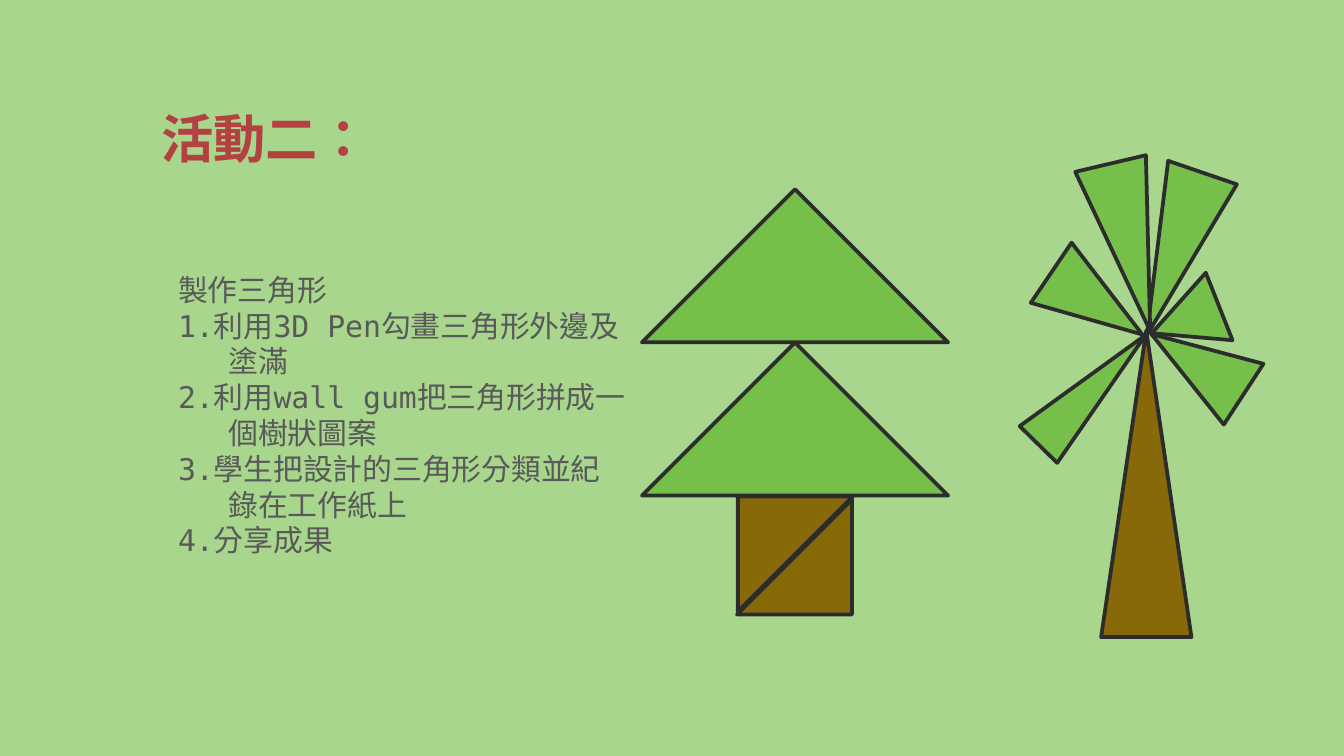
from pptx import Presentation
from pptx.dml.color import RGBColor
from pptx.enum.lang import MSO_LANGUAGE_ID
from pptx.enum.shapes import MSO_SHAPE
from pptx.enum.text import MSO_ANCHOR, MSO_AUTO_SIZE, PP_ALIGN
from pptx.util import Pt

GREEN, BROWN, OUTLINE = "77BF4B", "886909", "2C2C2C"


def color(hex_string):
    return RGBColor.from_string(hex_string)


def add_triangle(group, kind, left, top, width, height, rotation, fill):
    shape = group.shapes.add_shape(kind, Pt(left), Pt(top), Pt(width), Pt(height))
    shape.rotation = rotation
    shape.shadow.inherit = False
    shape.fill.solid()
    shape.fill.fore_color.rgb = color(fill)
    shape.line.color.rgb = color(OUTLINE)
    shape.line.width = Pt(2)


presentation = Presentation()
presentation.slide_width, presentation.slide_height = Pt(720), Pt(405)
slide = presentation.slides.add_slide(presentation.slide_layouts[0])
slide.background.fill.solid()
slide.background.fill.fore_color.rgb = color("A8D68C")

# Title and activity steps
title, steps = slide.shapes.title, slide.placeholders[1]
title.text = "活動二："
steps.text = "\n".join([
    "製作三角形",
    "1.利用3D Pen勾畫三角形外邊及塗滿",
    "2.利用wall gum把三角形拼成一個樹狀圖案",
    "3.學生把設計的三角形分類並紀錄在工作紙上",
    "4.分享成果",
])
for shape, box, font_name, size, text_color, bold, spacing in [
    (title, (79.2, 56.2, 210.2, 92.2), "Roboto", 28, "B44141", True, 0.8),
    (steps, (79.2, 138.2, 264.2, 195.1), "DejaVu Sans Mono", 16, "595959", False, 1.0),
]:
    shape.left, shape.top, shape.width, shape.height = map(Pt, box)
    frame = shape.text_frame
    frame.word_wrap = True
    frame.auto_size = MSO_AUTO_SIZE.NONE
    frame.vertical_anchor = MSO_ANCHOR.TOP
    frame.margin_left = frame.margin_right = Pt(7.2)
    frame.margin_top = frame.margin_bottom = Pt(7.2)
    for paragraph in frame.paragraphs:
        paragraph.alignment = PP_ALIGN.LEFT
        paragraph.line_spacing = spacing
        paragraph.space_before = Pt(0)
        paragraph.font.name = font_name
        paragraph.font.size = Pt(size)
        paragraph.font.bold = bold
        paragraph.font.color.rgb = color(text_color)
        # Traditional Chinese centres the full-width colon
        for run in paragraph.runs:
            run.font.language_id = MSO_LANGUAGE_ID.TRADITIONAL_CHINESE

# Hanging indent for the steps
for paragraph in steps.text_frame.paragraphs:
    properties = paragraph._p.get_or_add_pPr()
    properties.set("marL", str(Pt(36)))
    properties.set("indent", str(Pt(-27)))

# Fir tree: two crown triangles above a trunk of two halves
fir = slide.shapes.add_group_shape()
for left, top, size, rotation, fill in [
    (367.9, 125.4, 116, 135, GREEN),
    (367.9, 207.5, 116, 135, GREEN),
    (395.3, 266, 61.6, 90, BROWN),
    (394.8, 267.6, 61.6, 270, BROWN),
]:
    add_triangle(fir, MSO_SHAPE.RIGHT_TRIANGLE, left, top, size, size, rotation, fill)

# Palm tree: a tall trunk and six leaves meeting at its tip
palm = slide.shapes.add_group_shape()
for left, top, width, height, rotation, fill in [
    (589.9, 177.1, 48.4, 164.2, 0, BROWN),
    (571, 167.8, 28.1, 82.1, 44.4, GREEN),
    (609.8, 90, 38.9, 92.2, 198.9, GREEN),
    (615.6, 151.9, 38.9, 38.9, 248.4, GREEN),
    (568.1, 133.2, 38.9, 59, 124.1, GREEN),
    (622.1, 165.6, 38.9, 59, 303.1, GREEN),
    (586.1, 86.4, 38.9, 92.2, 166.7, GREEN),
]:
    add_triangle(palm, MSO_SHAPE.ISOSCELES_TRIANGLE, left, top, width, height, rotation, fill)

presentation.save("out.pptx")
